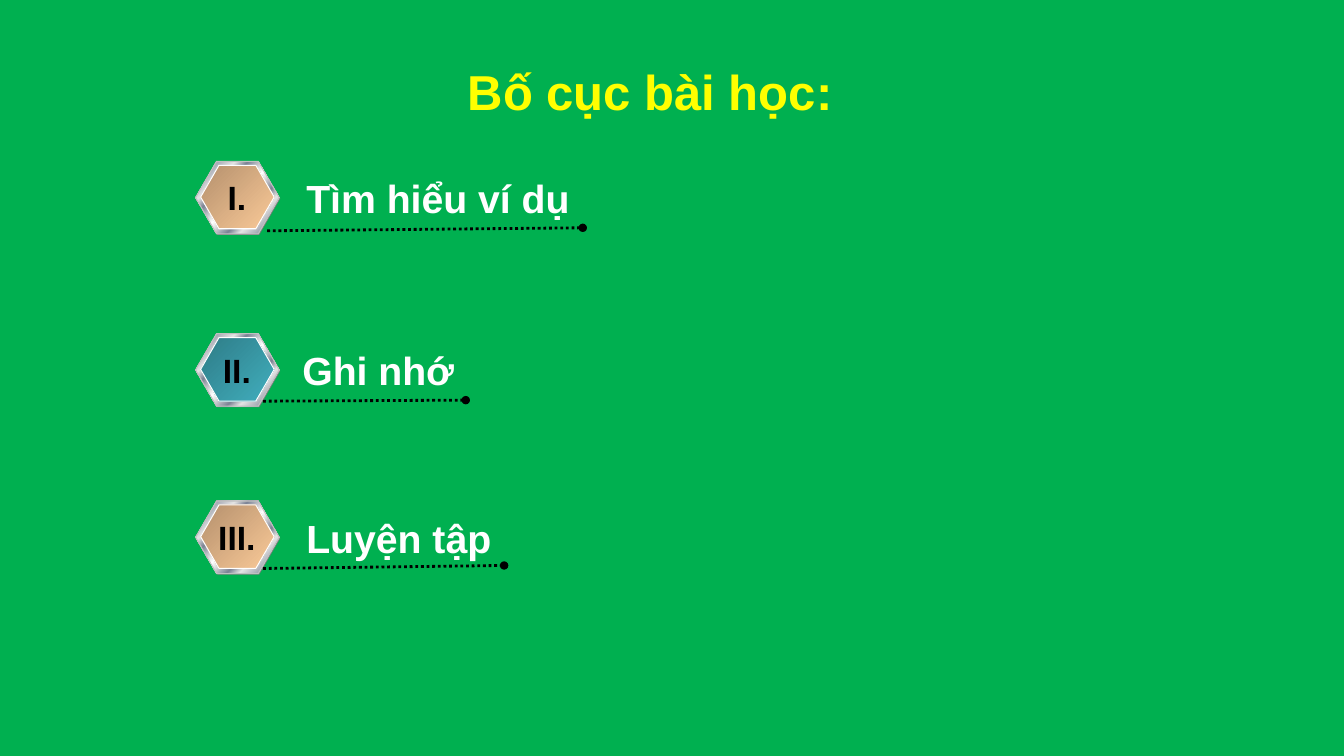
from lxml import etree
from pptx import Presentation
from pptx.dml.color import RGBColor
from pptx.enum.dml import MSO_LINE
from pptx.enum.shapes import MSO_CONNECTOR, MSO_SHAPE
from pptx.enum.text import MSO_ANCHOR, MSO_AUTO_SIZE, PP_ALIGN
from pptx.oxml.ns import qn
from pptx.util import Inches, Pt

FONT = "Arial"
METAL = [(0, "E6E6E6"), (7, "7D8496"), (26, "E6E6E6"), (34, "7D8496"),
         (46, "E6E6E6"), (50, "FFFFFF"), (54, "E6E6E6"), (66, "7D8496"),
         (74, "E6E6E6"), (93, "7D8496"), (100, "E6E6E6")]
BRONZE = [(0, "B4906D"), (100, "FBCA98")]
TEAL = [(0, "2E7C87"), (100, "41AEBD")]


def rgb(color):
    return RGBColor.from_string(color)


class LessonSlide:
    """Holds the slide and draws its elements in the lesson style."""

    def __init__(self, prs, background):
        self.s = prs.slides.add_slide(prs.slide_layouts[6])
        fill = self.s.background.fill
        fill.solid()
        fill.fore_color.rgb = rgb(background)

    def text(self, shapes, box, text, size, color, align=PP_ALIGN.LEFT, wrap=False):
        sp = shapes.add_textbox(*map(Inches, box))
        tf = sp.text_frame
        tf.word_wrap = wrap
        tf.auto_size = MSO_AUTO_SIZE.NONE if wrap else MSO_AUTO_SIZE.SHAPE_TO_FIT_TEXT
        p = tf.paragraphs[0]
        p.text = text
        p.alignment = align
        p.font.name = FONT
        p.font.size = Pt(size)
        p.font.bold = True
        p.font.color.rgb = rgb(color)
        return sp

    def title(self, box, text):
        sp = self.text(self.s.shapes, box, text, 35, "FFFF00", PP_ALIGN.CENTER, wrap=True)
        tf = sp.text_frame
        tf.vertical_anchor = MSO_ANCHOR.MIDDLE
        tf.paragraphs[0].line_spacing = 0.9

    def gradient(self, fill, stops):
        fill.gradient()
        fill.gradient_angle = 315
        gs_list = fill.gradient_stops[0]._gs.getparent()
        for gs in list(gs_list):
            gs_list.remove(gs)
        for position, color in stops:
            gs = etree.SubElement(gs_list, qn("a:gs"), pos=str(position * 1000))
            etree.SubElement(gs, qn("a:srgbClr"), val=color)

    def hexagon(self, shapes, box, fill, outline=None):
        sp = shapes.add_shape(MSO_SHAPE.HEXAGON, *map(Inches, box))
        sp.shadow.inherit = False
        sp.adjustments[0] = 0.289
        if isinstance(fill, str):
            sp.fill.solid()
            sp.fill.fore_color.rgb = rgb(fill)
        else:
            self.gradient(sp.fill, fill)
        if outline:
            sp.line.color.rgb = rgb(outline)
            sp.line.width = Pt(0.75)
        else:
            sp.line.fill.background()

    def dotted_line(self, shapes, start, end):
        cxn = shapes.add_connector(MSO_CONNECTOR.STRAIGHT, *map(Inches, start + end))
        cxn.line.color.rgb = rgb("000000")
        cxn.line.width = Pt(2)
        cxn.line.dash_style = MSO_LINE.ROUND_DOT
        etree.SubElement(cxn.line._get_or_add_ln(), qn("a:tailEnd"), type="oval")
        etree.SubElement(cxn._element.spPr, qn("a:effectLst"))

    def section(self, top, numeral, numeral_width, label, left, width, face, start, end_y):
        shapes = self.s.shapes.add_group_shape().shapes
        self.hexagon(shapes, (1.95, top + 0.01, 0.83, 0.72), "808080")
        self.hexagon(shapes, (1.94, top, 0.83, 0.72), METAL, "C0C0C0")
        self.hexagon(shapes, (1.99, top + 0.04, 0.73, 0.63), face, "FFFFFF")
        self.dotted_line(shapes, start, (left + width, end_y))
        self.text(shapes, (left, top + 0.08, width, 0.57), label, 28, "FFFFFF")
        self.text(shapes, (2.35 - numeral_width / 2, top + 0.11, numeral_width, 0.51),
                  numeral, 24, "000000", PP_ALIGN.CENTER)


def main():
    prs = Presentation()
    prs.slide_width = Inches(13.33)
    prs.slide_height = Inches(7.5)
    slide = LessonSlide(prs, "00B050")
    sections = [
        (1.6, "I.", 0.39, "Tìm hiểu ví dụ", 2.94, 2.84, BRONZE, (2.65, 2.29), 2.26),
        (3.31, "II.", 0.48, "Ghi nhớ", 2.9, 1.72, TEAL, (2.61, 3.98), 3.97),
        (4.97, "III.", 0.57, "Luyện tập", 2.94, 2.06, BRONZE, (2.61, 5.64), 5.61),
    ]
    for section in sections:
        slide.section(*section)
    slide.title((0.7, 0.21, 11.5, 1.45), "Bố cục bài học:")
    prs.save("out.pptx")


if __name__ == "__main__":
    main()
